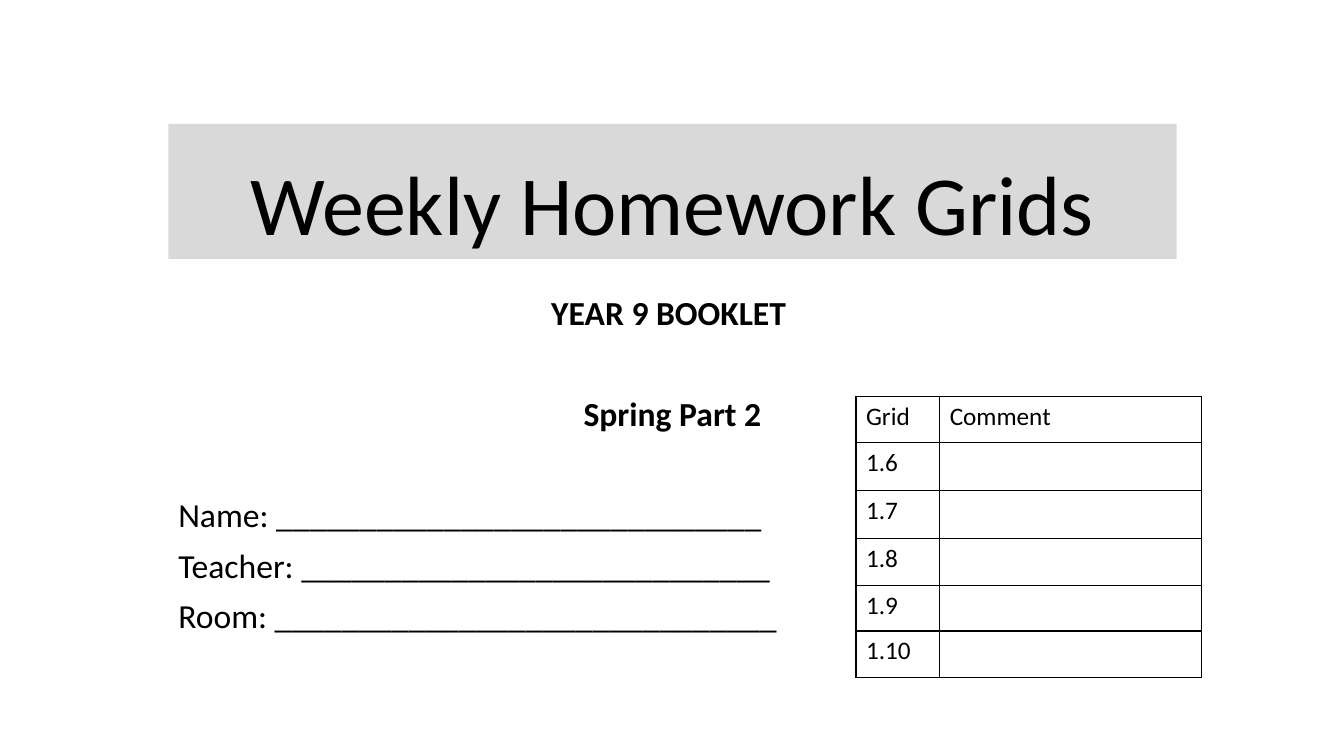
from pptx import Presentation
from pptx.dml.color import RGBColor as RGB
from pptx.enum.shapes import MSO_SHAPE as Shape
from pptx.enum.text import MSO_ANCHOR as Anchor, PP_ALIGN as Align
from pptx.oxml import parse_xml
from pptx.oxml.ns import nsdecls
from pptx.util import Inches, Pt

COLORS = {"ink": "000000", "band": "D9D9D9"}
FONT = "Calibri"


def write(para, text, size=24, bold=False, align=Align.LEFT, line=0.9, before=0):
    para.alignment = align
    para.line_spacing = line
    para.space_before = Pt(before)
    run = para.add_run()
    run.text = text
    run.font.name = FONT
    run.font.size = Pt(size)
    run.font.bold = bold
    run.font.color.rgb = RGB.from_string(COLORS["ink"])


def add_border(cell):
    props = cell._tc.get_or_add_tcPr()
    for i, side in enumerate("LRTB"):
        props.insert(i, parse_xml(
            f'<a:ln{side} {nsdecls("a")} w="12700"><a:solidFill>'
            f'<a:srgbClr val="{COLORS["ink"]}"/></a:solidFill></a:ln{side}>'))


prs = Presentation()
prs.slide_width, prs.slide_height = Inches(13.33), Inches(7.5)
slide = prs.slides.add_slide(prs.slide_layouts[6])

# Title band
band = slide.shapes.add_shape(
    Shape.RECTANGLE, Inches(1.67), Inches(1.23), Inches(10), Inches(1.34))
band.shadow.inherit = False
band.fill.solid()
band.fill.fore_color.rgb = RGB.from_string(COLORS["band"])
band.line.fill.background()
band.text_frame.word_wrap = True
band.text_frame.vertical_anchor = Anchor.BOTTOM
write(band.text_frame.paragraphs[0], "Weekly Homework Grids",
      size=60, align=Align.CENTER)

# Booklet headings and pupil details
box = slide.shapes.add_textbox(Inches(1.67), Inches(2.89), Inches(10), Inches(3.71))
frame = box.text_frame
frame.word_wrap = True
GAP, WIDE = 10, 46.4
write(frame.paragraphs[0], "YEAR 9 BOOKLET ", bold=True,
      align=Align.CENTER, before=GAP)
write(frame.add_paragraph(), "Spring Part 2", bold=True,
      align=Align.CENTER, before=WIDE)
fields = [("Name", 29, WIDE), ("Teacher", 28, GAP), ("Room", 30, GAP)]
for label, count, before in fields:
    write(frame.add_paragraph(), f"{label}: {'_' * count}", before=before)

# Comment table
rows = [("Grid", "Comment"), ("1.6", ""), ("1.7", ""),
        ("1.8", ""), ("1.9", ""), ("1.10 ", "")]
heights = [0.46, 0.48, 0.47, 0.47, 0.45, 0.46]
table = slide.shapes.add_table(
    len(rows), 2, Inches(8.49), Inches(3.93), Inches(3.43), Inches(2.79)).table
table.first_row = table.horz_banding = False
for col, width in zip(table.columns, (0.83, 2.6)):
    col.width = Inches(width)
for r, (texts, height) in enumerate(zip(rows, heights)):
    table.rows[r].height = Inches(height)
    for c, text in enumerate(texts):
        cell = table.cell(r, c)
        cell.fill.background()
        add_border(cell)
        if text:
            write(cell.text_frame.paragraphs[0], text, size=18, line=1.0)

prs.save("out.pptx")
